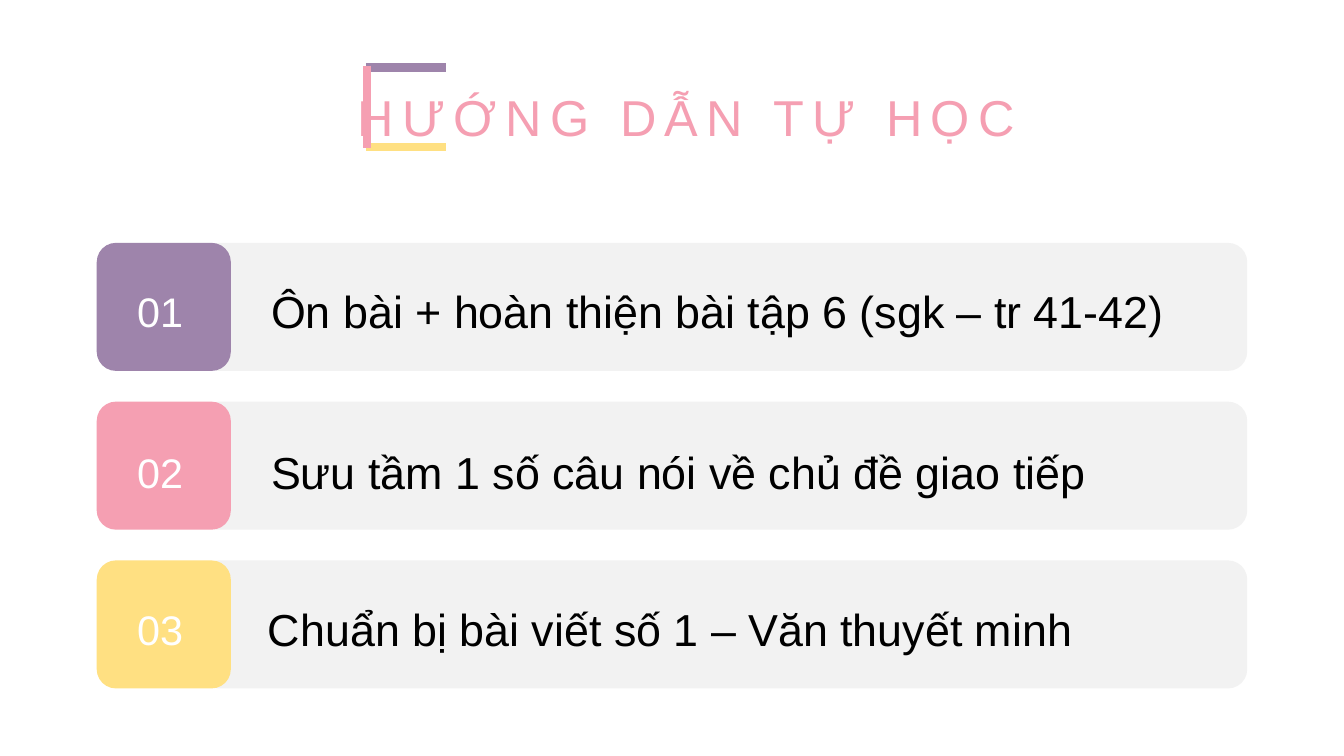
from lxml import etree
from pptx import Presentation
from pptx.dml.color import RGBColor
from pptx.enum import shapes, text
from pptx.oxml.ns import qn
from pptx.util import Inches, Pt

PURPLE = RGBColor(0x9E, 0x84, 0xAB)
PINK = RGBColor(0xF5, 0x9F, 0xB2)
YELLOW = RGBColor(0xFF, 0xE0, 0x82)
GRAY = RGBColor(0xF2, 0xF2, 0xF2)
WHITE = RGBColor(0xFF, 0xFF, 0xFF)
BLACK = RGBColor(0, 0, 0)

# Content
TITLE = "HƯỚNG DẪN TỰ HỌC"
# number, task, colour, text left, text top
TASKS = [
    ("01", "Ôn bài + hoàn thiện bài tập 6 (sgk – tr 41-42)", PURPLE, 2.59, 2.77),
    ("02", "Sưu tầm 1 số câu nói về chủ đề giao tiếp", PINK, 2.59, 4.36),
    ("03", "Chuẩn bị bài viết số 1 – Văn thuyết minh", YELLOW, 2.56, 5.92),
]
# x1, y1, x2, y2, colour
BRACKET = [
    (3.63, 0.67, 4.42, 0.67, PURPLE),
    (3.63, 1.46, 4.42, 1.46, YELLOW),
    (3.64, 0.65, 3.64, 1.47, PINK),
]
ROW_TOP, ROW_STEP, ROW_HEIGHT = 2.41, 1.575, 1.27


def place(sp, left, top, width, height):
    sp.left, sp.top = Inches(left), Inches(top)
    sp.width, sp.height = Inches(width), Inches(height)


def write(p, words, size, color):
    r = p.add_run()
    r.text = words
    r.font.name = "Arial"
    r.font.size = Pt(size)
    r.font.color.rgb = color
    return r


def add_card(s, left, top, width, color):
    sp = s.shapes.add_shape(shapes.MSO_SHAPE.ROUNDED_RECTANGLE, Inches(left),
                            Inches(top), Inches(width), Inches(ROW_HEIGHT))
    sp.adjustments[0] = 0.15
    sp.shadow.inherit = False
    sp.fill.solid()
    sp.fill.fore_color.rgb = color
    sp.line.fill.background()


def add_text(s, left, top, width, height):
    box = s.shapes.add_textbox(Inches(left), Inches(top), Inches(width), Inches(height))
    return box.text_frame


prs = Presentation()
prs.slide_width, prs.slide_height = Inches(13.33), Inches(7.5)
s = prs.slides.add_slide(prs.slide_layouts[5])

# Title with wide letter spacing
title = s.shapes.title
place(title, 3.39, 0.8, 6.84, 0.71)
tf = title.text_frame
tf.word_wrap = True
tf.auto_size = text.MSO_AUTO_SIZE.NONE
tf.vertical_anchor = text.MSO_ANCHOR.TOP
p = tf.paragraphs[0]
p.alignment = text.PP_ALIGN.CENTER
r = write(p, TITLE, 36, PINK)
r.font._element.set("spc", "600")

# Bracket around the start of the title
for x1, y1, x2, y2, color in BRACKET:
    line = s.shapes.add_connector(shapes.MSO_CONNECTOR.STRAIGHT, Inches(x1),
                                  Inches(y1), Inches(x2), Inches(y2))
    line.line.color.rgb = color
    line.line.width = Pt(6)
    etree.SubElement(line._element.spPr, qn("a:effectLst"))

# Task rows: grey bar, coloured tile, number, wording
for i, (number, task, color, left, top) in enumerate(TASKS):
    row_top = ROW_TOP + i * ROW_STEP
    add_card(s, 1.98, row_top, 10.39, GRAY)
    add_card(s, 0.96, row_top, 1.33, color)

    tf = add_text(s, 1.36, top, 0.46, 0.54)
    tf.margin_left = tf.margin_right = tf.margin_top = tf.margin_bottom = 0
    tf.word_wrap = False
    tf.vertical_anchor = text.MSO_ANCHOR.MIDDLE
    tf.paragraphs[0].line_spacing = 1.2
    write(tf.paragraphs[0], number, 29.5, WHITE)

    tf = add_text(s, left, top, 9.23, 0.64)
    tf.word_wrap = True
    write(tf.paragraphs[0], task, 32, BLACK)

prs.save("out.pptx")
